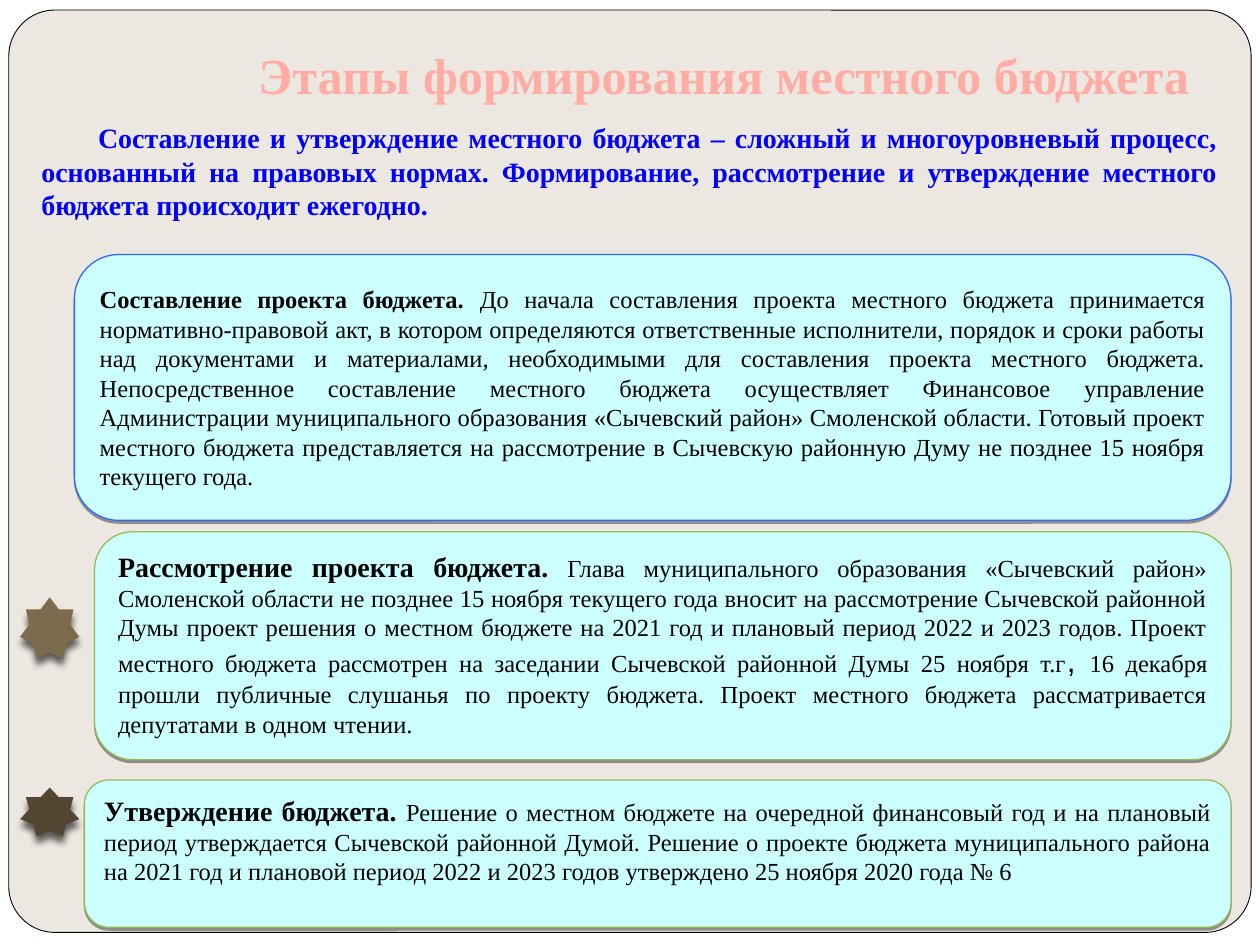
from dataclasses import dataclass

from lxml import etree
from pptx import Presentation
from pptx import util as u
from pptx.dml.color import RGBColor
from pptx.enum import shapes, text
from pptx.oxml.ns import qn

COLUMNS, ROWS = 100, 75
CELL = u.Inches(0.1)


@dataclass(frozen=True)
class Theme:
    font: str = "Times New Roman"
    accent_font: str = "Arial"
    paper: str = "FFFFFF"
    frame: str = "ECE8E1"
    ink: str = "000000"
    title: str = "FFACA4"
    intro: str = "0000FF"
    card: str = "CCFFFF"
    blue_edge: str = "3366FF"
    green_edge: str = "98B954"
    light_star: str = "7C6B4D"
    dark_star: str = "534733"
    title_size: float = 28.8
    lead_size: float = 16
    body_size: float = 14
    comma_size: float = 18


THEME = Theme()
CARD_SHADOW = dict(opacity=38, blur=0, distance=1.6)
STAR_SHADOW = dict(opacity=60, blur=4, distance=4)


@dataclass(frozen=True)
class Box:
    """A rectangle measured in grid columns and rows."""
    left: float
    top: float
    width: float
    height: float

    def inner(self, left, top, width, height):
        return Box(self.left + left, self.top + top, width, height)

    def lengths(self):
        return [u.Emu(round(value * CELL))
                for value in (self.left, self.top, self.width, self.height)]


def color(value):
    return RGBColor.from_string(value)


def add_run(paragraph, words, size=THEME.body_size, bold=False,
            ink=THEME.ink, font=THEME.font):
    run = paragraph.add_run()
    run.text = words
    run.font.name = font
    run.font.size = u.Pt(size)
    run.font.bold = bold
    run.font.color.rgb = color(ink)


def write(shape, runs, align=text.PP_ALIGN.JUSTIFY,
          anchor=text.MSO_ANCHOR.TOP, indent=0):
    """Fill a shape with one paragraph of (words, format) runs."""
    frame = shape.text_frame
    frame.word_wrap = True
    frame.vertical_anchor = anchor
    paragraph = frame.paragraphs[0]
    paragraph.alignment = align
    if indent:
        paragraph._p.get_or_add_pPr().set("indent", str(round(indent * CELL)))
    for words, style in runs:
        add_run(paragraph, words, **style)


def add_shadow(shape, opacity, blur, distance):
    effects = shape._element.spPr.find(qn("a:effectLst"))
    shadow = etree.SubElement(
        effects, qn("a:outerShdw"), blurRad=str(u.Pt(blur)),
        dist=str(u.Pt(distance)), dir="5400000", rotWithShape="0")
    tint = etree.SubElement(shadow, qn("a:srgbClr"), val=THEME.ink)
    etree.SubElement(tint, qn("a:alpha"), val=str(opacity * 1000))


def add_figure(slide, kind, box, fill, edge=None, edge_width=0.75, shadow=None):
    shape = slide.shapes.add_shape(kind, *box.lengths())
    shape.fill.solid()
    shape.fill.fore_color.rgb = color(fill)
    if edge:
        shape.line.color.rgb = color(edge)
        shape.line.width = u.Pt(edge_width)
    else:
        shape.line.fill.background()
    shape.shadow.inherit = False
    if shadow:
        add_shadow(shape, **shadow)
    return shape


def draw_frame(slide, box):
    slide.background.fill.solid()
    slide.background.fill.fore_color.rgb = color(THEME.paper)
    frame = add_figure(slide, shapes.MSO_SHAPE.ROUNDED_RECTANGLE,
                       box.inner(0.7, 0.8, box.width - 1.4, box.height - 1.8),
                       THEME.frame, THEME.ink, edge_width=0.5)
    frame.adjustments[0] = 0.05


def draw_heading(slide, box):
    title = slide.shapes.add_textbox(*box.inner(19.5, 2.3, 80.5, 7).lengths())
    title.text_frame.margin_bottom = CELL
    write(title, [("Этапы формирования местного бюджета",
                   dict(size=THEME.title_size, bold=True, ink=THEME.title))],
          align=text.PP_ALIGN.LEFT, anchor=text.MSO_ANCHOR.BOTTOM)
    intro = slide.shapes.add_textbox(*box.inner(2.3, 9.1, 95.3, 9.4).lengths())
    write(intro, [(
        "Составление и утверждение местного бюджета – сложный и многоуровневый "
        "процесс, основанный на правовых нормах. Формирование, рассмотрение и "
        "утверждение местного бюджета происходит ежегодно.",
        dict(size=THEME.lead_size, bold=True, ink=THEME.intro))], indent=4.5)


def draw_stage(slide, box, edge, runs, anchor=text.MSO_ANCHOR.TOP):
    card = add_figure(slide, shapes.MSO_SHAPE.ROUNDED_RECTANGLE, box,
                      THEME.card, edge, shadow=CARD_SHADOW)
    write(card, runs, anchor=anchor)


def draw_stages(slide, box):
    """Draw the stars and the three cards, which share a right edge."""
    for top, height, fill in ((27.2, 4.9, THEME.light_star),
                              (42.3, 3.9, THEME.dark_star)):
        add_figure(slide, shapes.MSO_SHAPE.STAR_7_POINT,
                   box.inner(0, top, 4.7, height), fill, shadow=STAR_SHADOW)

    def row(left, top, height):
        return box.inner(left, top, box.width - left, height)

    lead = dict(size=THEME.lead_size, bold=True)
    comma = dict(size=THEME.comma_size, font=THEME.accent_font)
    draw_stage(slide, row(4.3, 0, 21.1), THEME.blue_edge, [
        ("Составление проекта бюджета. ", dict(bold=True)),
        ("До начала составления проекта местного бюджета принимается "
         "нормативно-правовой акт, в котором определяются ответственные "
         "исполнители, порядок и сроки работы над документами и материалами, "
         "необходимыми для составления проекта местного бюджета. "
         "Непосредственное составление местного бюджета осуществляет "
         "Финансовое управление Администрации муниципального образования "
         "«Сычевский район» Смоленской области. Готовый проект местного "
         "бюджета представляется на рассмотрение в Сычевскую районную Думу "
         "не позднее 15 ноября текущего года.", {}),
    ], anchor=text.MSO_ANCHOR.MIDDLE)
    draw_stage(slide, row(5.9, 22, 18.1), THEME.green_edge, [
        ("Рассмотрение проекта бюджета.", lead),
        (" Глава муниципального образования «Сычевский район» Смоленской "
         "области не позднее 15 ноября текущего года вносит на рассмотрение "
         "Сычевской районной Думы проект решения о местном бюджете на 2021 год "
         "и плановый период 2022 и 2023 годов. Проект местного бюджета "
         "рассмотрен на заседании Сычевской районной Думы 25 ноября т.г", {}),
        (", ", comma),
        ("16 декабря прошли публичные слушанья по проекту бюджета. Проект "
         "местного бюджета рассматривается депутатами в одном чтении.", {}),
    ])
    draw_stage(slide, row(5.1, 41.7, 11.7), THEME.green_edge, [
        ("Утверждение бюджета. ", lead),
        ("Решение о местном бюджете на очередной финансовый год и на плановый "
         "период утверждается Сычевской районной Думой. Решение о проекте "
         "бюджета муниципального района на 2021 год и плановой период 2022 и "
         "2023 годов утверждено 25 ноября 2020 года № 6", {}),
    ])


def main():
    presentation = Presentation()
    presentation.slide_width = COLUMNS * CELL
    presentation.slide_height = ROWS * CELL
    slide = presentation.slides.add_slide(presentation.slide_layouts[6])
    page = Box(0, 0, COLUMNS, ROWS)
    draw_frame(slide, page)
    draw_heading(slide, page)
    draw_stages(slide, page.inner(1.6, 20.2, 96.1, 53.4))
    presentation.save("out.pptx")


if __name__ == "__main__":
    main()
